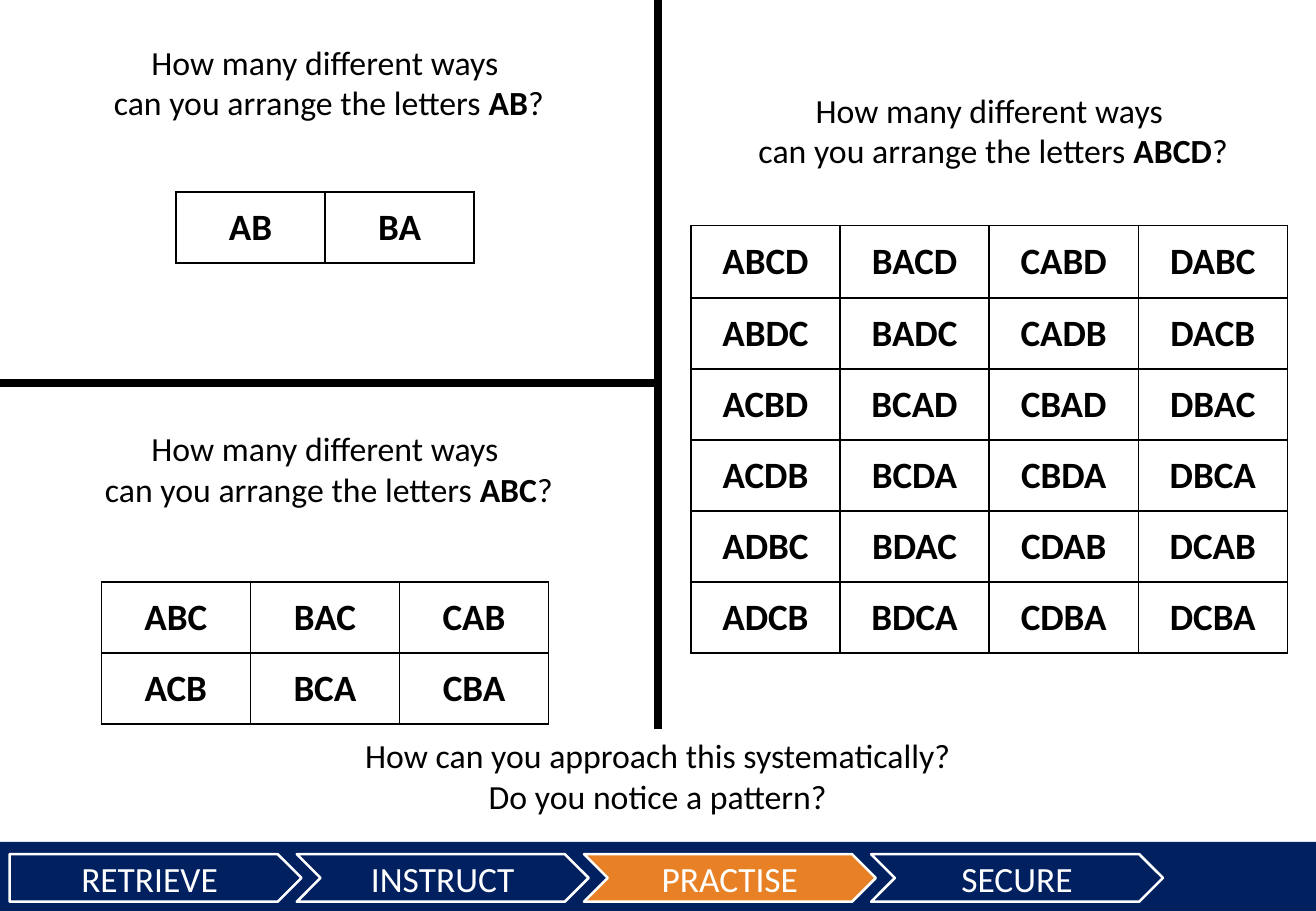
from itertools import permutations

from lxml import etree
from pptx import Presentation
from pptx.dml.color import RGBColor
from pptx.enum.shapes import MSO_CONNECTOR, MSO_SHAPE
from pptx.enum.text import MSO_ANCHOR, MSO_AUTO_SIZE, PP_ALIGN
from pptx.oxml.ns import qn
from pptx.util import Pt

LINE = MSO_CONNECTOR.STRAIGHT
RECT, PLATE, CHEVRON = MSO_SHAPE.RECTANGLE, MSO_SHAPE.PENTAGON, MSO_SHAPE.CHEVRON
MIDDLE, CENTER = MSO_ANCHOR.MIDDLE, PP_ALIGN.CENTER
GROW = MSO_AUTO_SIZE.SHAPE_TO_FIT_TEXT
COLORS = {"navy": "002060", "orange": "E88126", "white": "FFFFFF", "black": "000000"}
RGB = {name: RGBColor.from_string(code) for name, code in COLORS.items()}


def write(frame, text, size=20, color="black", bold=False):
    for i, line in enumerate(text.split("\n")):
        para = frame.paragraphs[0] if i == 0 else frame.add_paragraph()
        para.alignment = CENTER
        for j, part in enumerate(line.split("*")):
            run = para.add_run()
            run.text = part
            run.font.name = "Calibri"
            run.font.size = Pt(size)
            run.font.bold = bold or j % 2 == 1
            run.font.color.rgb = RGB[color]


def border(cell):
    props = cell._tc.get_or_add_tcPr()
    for side in ("lnL", "lnR", "lnT", "lnB"):
        edge = etree.SubElement(props, qn(f"a:{side}"), w=str(Pt(1)))
        fill = etree.SubElement(edge, qn("a:solidFill"))
        etree.SubElement(fill, qn("a:srgbClr"), val=COLORS["black"])


prs = Presentation()
prs.slide_width, prs.slide_height = Pt(780), Pt(540)
slide = prs.slides.add_slide(prs.slide_layouts[6])
shapes = slide.shapes

bar = shapes.add_shape(RECT, Pt(0), Pt(499), Pt(780), Pt(41))
bar.shadow.inherit = False
bar.fill.solid()
bar.fill.fore_color.rgb = RGB["navy"]
bar.line.fill.background()

for i, stage in enumerate(["RETRIEVE", "INSTRUCT", "PRACTISE", "SECURE"]):
    kind = PLATE if i == 0 else CHEVRON
    step = shapes.add_shape(kind, Pt(5.7 + 170.2 * i), Pt(506.3), Pt(173), Pt(28.2))
    step.shadow.inherit = False
    step.fill.solid()
    step.fill.fore_color.rgb = RGB["orange" if stage == "PRACTISE" else "navy"]
    step.line.color.rgb = RGB["white"]
    step.line.width = Pt(1.5)
    step.text_frame.vertical_anchor = MIDDLE
    write(step.text_frame, stage, size=21, color="white")

for x1, y1, x2, y2 in [(390, 0, 390, 432), (0, 227, 390, 227)]:
    rule = shapes.add_connector(LINE, Pt(x1), Pt(y1), Pt(x2), Pt(y2))
    rule.line.color.rgb = RGB["black"]
    rule.line.width = Pt(4.5)
    etree.SubElement(rule._element.spPr, qn("a:effectLst"))

ask = "How many different ways\n can you arrange the letters *{}*?"
notes = [
    (ask.format("AB"), 54.4, 21.1, 276.5),
    (ask.format("ABC"), 49, 250.1, 287.3),
    (ask.format("ABCD"), 436.3, 49.4, 300.2),
    ("How can you approach this systematically?\nDo you notice a pattern?", 207.4, 432.2, 365),
]
for text, x, y, w in notes:
    box = shapes.add_textbox(Pt(x), Pt(y), Pt(w), Pt(55.4))
    box.text_frame.word_wrap = False
    box.text_frame.auto_size = GROW
    write(box.text_frame, text)

col, row = 88.4, 42.1
for word, x, y, top in [("AB", 104.3, 113.8, row), ("ABC", 60, 344.9, row), ("ABCD", 409.5, 133.5, 43.2)]:
    ways = ["".join(p) for p in permutations(word)]
    cols = len(word)
    rows = len(ways) // cols
    high = top + row * (rows - 1)
    frame = shapes.add_table(rows, cols, Pt(x), Pt(y), Pt(col * cols), Pt(high))
    grid = frame.table
    grid.first_row = grid.horz_banding = False
    for c in range(cols):
        grid.columns[c].width = Pt(col)
    for r in range(rows):
        grid.rows[r].height = Pt(row if r else top)
    for i, way in enumerate(ways):
        cell = grid.cell(i % rows, i // rows)
        border(cell)
        cell.fill.solid()
        cell.fill.fore_color.rgb = RGB["white"]
        cell.vertical_anchor = MIDDLE
        write(cell.text_frame, way, size=22, bold=True)

prs.save("out.pptx")
